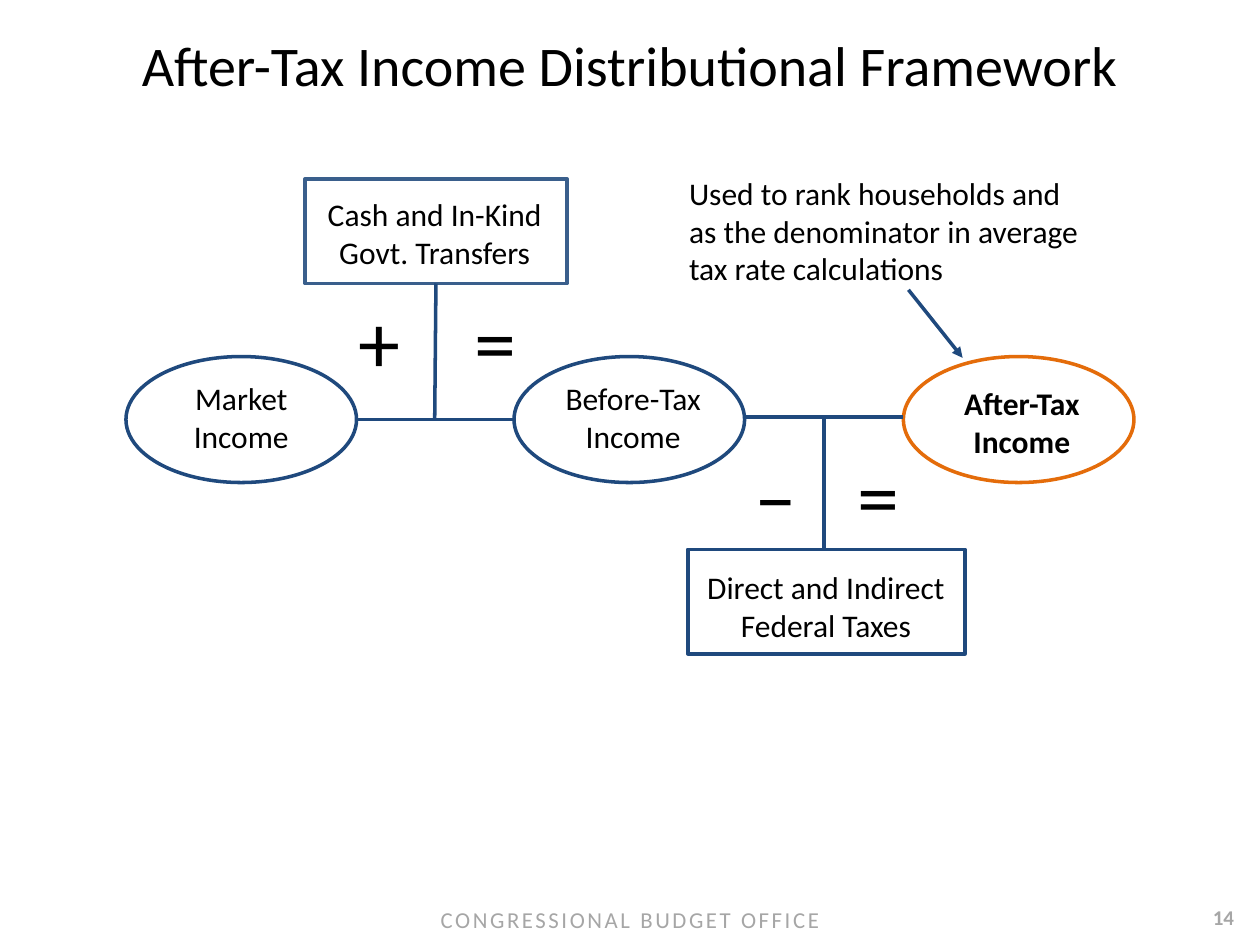
"""Build the after-tax income distributional framework slide."""
from lxml import etree
from pptx import Presentation
from pptx.dml.color import RGBColor
from pptx.enum.shapes import MSO_CONNECTOR, MSO_SHAPE
from pptx.enum.text import MSO_ANCHOR, PP_ALIGN
from pptx.oxml.ns import qn
from pptx.util import Inches, Pt

NAVY, ORANGE, BLACK, GRAY = "1F497D", "E46C0A", "000000", "A6A6A6"


def color(hex_code):
    """Turn a hex string into a colour."""
    return RGBColor.from_string(hex_code)


def write(frame, lines, size, align=PP_ALIGN.CENTER, ink=BLACK, bold=False):
    """Write one paragraph per line and return the last run."""
    for number, line in enumerate(lines):
        paragraph = frame.add_paragraph() if number else frame.paragraphs[0]
        paragraph.alignment = align
        run = paragraph.add_run()
        run.text = line
        run.font.name = "Calibri"
        run.font.size = Pt(size)
        run.font.bold = bold
        run.font.color.rgb = color(ink)
    return run


prs = Presentation()
prs.slide_width, prs.slide_height = Inches(10), Inches(7.5)
slide = prs.slides.add_slide(prs.slide_layouts[5])
shapes = slide.shapes

title = shapes.title
title.left, title.top = Inches(0), Inches(0.19)
title.width, title.height = Inches(10), Inches(0.64)
write(title.text_frame, ["After-Tax Income Distributional Framework"], 32)

page_number = shapes.add_textbox(Inches(9.42), Inches(7.13), Inches(0.58), Inches(0.31))
page_number.text_frame.word_wrap = True
write(page_number.text_frame, ["14"], 12, ink=GRAY, bold=True)

agency = shapes.add_textbox(Inches(0), Inches(7.08), Inches(10), Inches(0.38))
agency.text_frame.word_wrap = True
agency.text_frame.vertical_anchor = MSO_ANCHOR.MIDDLE
agency.text_frame.margin_top = Inches(0.1)
agency_run = write(agency.text_frame, ["CONGRESSIONAL BUDGET OFFICE"], 13, ink=GRAY)
agency_run.font._element.set("spc", "150")

outlines = [
    (MSO_SHAPE.OVAL, 1, 2.83, 1.83, 1, NAVY),
    (MSO_SHAPE.OVAL, 4.08, 2.83, 1.83, 1, NAVY),
    (MSO_SHAPE.OVAL, 7.17, 2.83, 1.83, 1, ORANGE),
    (MSO_SHAPE.RECTANGLE, 2.42, 1.42, 2.08, 0.83, "3A5F8C"),
    (MSO_SHAPE.RECTANGLE, 5.46, 4.36, 2.2, 0.83, NAVY),
]
for kind, left, top, width, height, edge in outlines:
    outline = shapes.add_shape(kind, Inches(left), Inches(top), Inches(width), Inches(height))
    outline.shadow.inherit = False
    outline.fill.background()
    outline.line.color.rgb = color(edge)
    outline.line.width = Pt(2)

links = [
    (2.83, 3.33, 4.08, 3.33, False),
    (5.92, 3.31, 7.17, 3.31, False),
    (6.54, 4.36, 6.54, 3.3, False),
    (3.45, 3.33, 3.46, 2.25, False),
    (7.21, 2.3, 7.64, 2.84, True),
]
for start_x, start_y, end_x, end_y, has_arrow in links:
    link = shapes.add_connector(
        MSO_CONNECTOR.STRAIGHT, Inches(start_x), Inches(start_y), Inches(end_x), Inches(end_y)
    )
    link.line.color.rgb = color(NAVY)
    link.line.width = Pt(2)
    if has_arrow:
        etree.SubElement(link.line._get_or_add_ln(), qn("a:tailEnd"), type="triangle")
    etree.SubElement(link._element.spPr, qn("a:effectLst"))

labels = [
    (["Market", "Income"], 1.43, 2.96, 0.97, False),
    (["Before-Tax", "Income"], 4.38, 2.96, 1.29, False),
    (["After-Tax", "Income"], 7.53, 3, 1.16, True),
    (["Cash and In-Kind", "Govt. Transfers"], 2.49, 1.5, 1.92, False),
    (["Direct and Indirect", "Federal Taxes"], 5.5, 4.46, 2.11, False),
]
for lines, left, top, width, bold in labels:
    label = shapes.add_textbox(Inches(left), Inches(top), Inches(width), Inches(0.71))
    label.text_frame.word_wrap = False
    write(label.text_frame, lines, 18, bold=bold)

for sign, left, top in [("+", 2.75, 2.25), ("=", 3.67, 2.25), ("‒", 5.89, 3.46), ("=", 6.71, 3.47)]:
    operator = shapes.add_textbox(Inches(left), Inches(top), Inches(0.54), Inches(0.91))
    operator.text_frame.word_wrap = False
    write(operator.text_frame, [sign], 48, PP_ALIGN.LEFT)

ranking_note = shapes.add_textbox(Inches(5.37), Inches(1.33), Inches(3.39), Inches(1.01))
ranking_note.text_frame.word_wrap = False
write(
    ranking_note.text_frame,
    ["Used to rank households and", "as the denominator in average", "tax rate calculations"],
    18,
    PP_ALIGN.LEFT,
)

prs.save("out.pptx")
